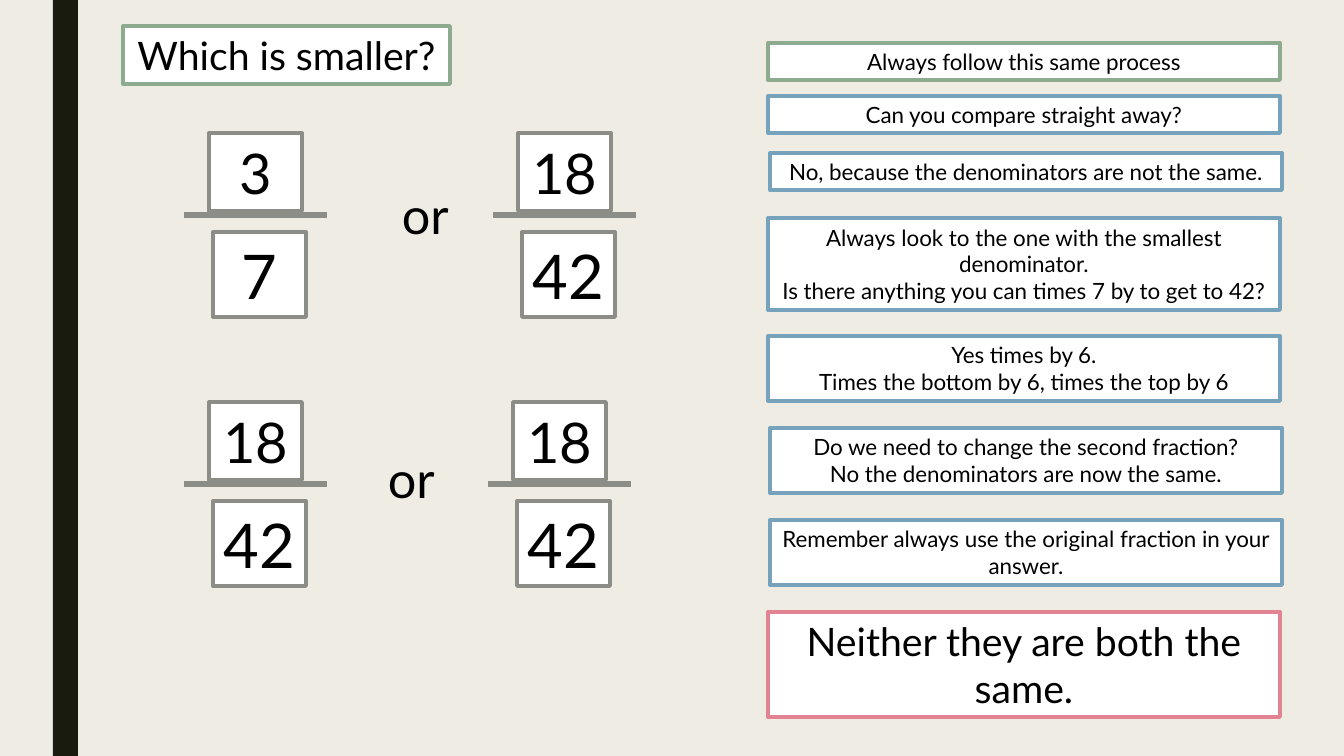
from pptx import Presentation
from pptx.dml.color import RGBColor
from pptx.enum.shapes import MSO_CONNECTOR, MSO_SHAPE
from pptx.enum.text import MSO_ANCHOR, PP_ALIGN
from pptx.oxml.xmlchemy import OxmlElement
from pptx.util import Emu, Pt

EMU_PER_PX = 914400 / 100.8
FONT = "Lato"
CREAM = RGBColor(0xEF, 0xED, 0xE3)
DARK = RGBColor(0x19, 0x1B, 0x0E)
WHITE = RGBColor(0xFF, 0xFF, 0xFF)
BLACK = RGBColor(0x00, 0x00, 0x00)
GREEN = RGBColor(0x8D, 0xAB, 0x8E)
BLUE = RGBColor(0x77, 0xA2, 0xBB)
PINK = RGBColor(0xE2, 0x83, 0x94)
GREY = RGBColor(0x8C, 0x8D, 0x86)

TITLE = "Which is smaller?"
STRIP_BOX = (53, 0, 25, 756)
TITLE_BOX = (123, 26, 327, 58)

FRACTIONS = [
    ("3", "7", 184, 133),
    ("18", "42", 493, 133),
    ("18", "42", 184, 402),
    ("18", "42", 488, 402),
]
NUMBER_WIDTH = 93
BAR_WIDTH = 143
BAR_DROP = 82
OR_BOXES = [(392, 179, 87, 72), (378, 443, 87, 72)]

STEP_WIDTH = 512
STEPS = [
    ("Always follow this same process", 768, 43, 37, GREEN, 16),
    ("Can you compare straight away?", 768, 96, 37, BLUE, 16),
    ("No, because the denominators are not the same.", 770, 153, 37, BLUE, 16),
    ("Always look to the one with the smallest denominator.\n"
     "Is there anything you can times 7 by to get to 42?", 768, 218, 92, BLUE, 16),
    ("Yes times by 6.\nTimes the bottom by 6, times the top by 6", 768, 336, 65, BLUE, 16),
    ("Do we need to change the second fraction?\n"
     "No the denominators are now the same.", 770, 428, 65, BLUE, 16),
    ("Remember always use the original fraction in your answer.", 770, 520, 65, BLUE, 16),
    ("Neither they are both the same.", 768, 612, 105, PINK, 28),
]


def px(*lengths):
    """Turn pixel lengths into EMU."""
    return [Emu(round(length * EMU_PER_PX)) for length in lengths]


def write(shape, text, size, alignment=PP_ALIGN.CENTER, anchor=MSO_ANCHOR.MIDDLE):
    """Set and format the text of a shape."""
    frame = shape.text_frame
    frame.text = text
    frame.word_wrap = True
    frame.vertical_anchor = anchor
    for paragraph in frame.paragraphs:
        paragraph.alignment = alignment
        for run in paragraph.runs:
            run.font.name = FONT
            run.font.size = Pt(size)
            run.font.color.rgb = BLACK


def outline(shape, color):
    """Give a shape a white fill and a coloured border."""
    shape.fill.solid()
    shape.fill.fore_color.rgb = WHITE
    shape.line.color.rgb = color
    shape.line.width = Pt(2.75)


def add_box(shapes, box, text, size, color):
    """Add a bordered text rectangle."""
    shape = shapes.add_shape(MSO_SHAPE.RECTANGLE, *px(*box))
    shape.shadow.inherit = False
    outline(shape, color)
    write(shape, text, size)


def add_fraction(slide, numerator, denominator, left, top):
    """Add a grouped fraction with its bar."""
    shapes = slide.shapes.add_group_shape().shapes
    add_box(shapes, (left + 25, top, NUMBER_WIDTH, 78), numerator, 40, GREY)
    add_box(shapes, (left + 29, top + 99, NUMBER_WIDTH, 85), denominator, 44, GREY)
    bar_top = top + BAR_DROP
    bar = shapes.add_connector(
        MSO_CONNECTOR.STRAIGHT, *px(left, bar_top, left + BAR_WIDTH, bar_top))
    bar.line.color.rgb = GREY
    bar.line.width = Pt(4.5)
    bar._element.spPr.append(OxmlElement("a:effectLst"))


def main():
    """Build the fraction comparison slide."""
    presentation = Presentation()
    presentation.slide_width, presentation.slide_height = px(1344, 756)
    slide = presentation.slides.add_slide(presentation.slide_layouts[5])
    slide.background.fill.solid()
    slide.background.fill.fore_color.rgb = CREAM

    title = slide.shapes.title
    title.left, title.top, title.width, title.height = px(*TITLE_BOX)
    outline(title, GREEN)
    write(title, TITLE, 28)

    strip = slide.shapes.add_shape(MSO_SHAPE.RECTANGLE, *px(*STRIP_BOX))
    strip.shadow.inherit = False
    strip.fill.solid()
    strip.fill.fore_color.rgb = DARK
    strip.line.fill.background()

    for fraction in FRACTIONS:
        add_fraction(slide, *fraction)
    for box in OR_BOXES:
        write(slide.shapes.add_textbox(*px(*box)), "or", 36, PP_ALIGN.LEFT, MSO_ANCHOR.TOP)
    for text, left, top, height, color, size in STEPS:
        add_box(slide.shapes, (left, top, STEP_WIDTH, height), text, size, color)

    presentation.save("out.pptx")


if __name__ == "__main__":
    main()
